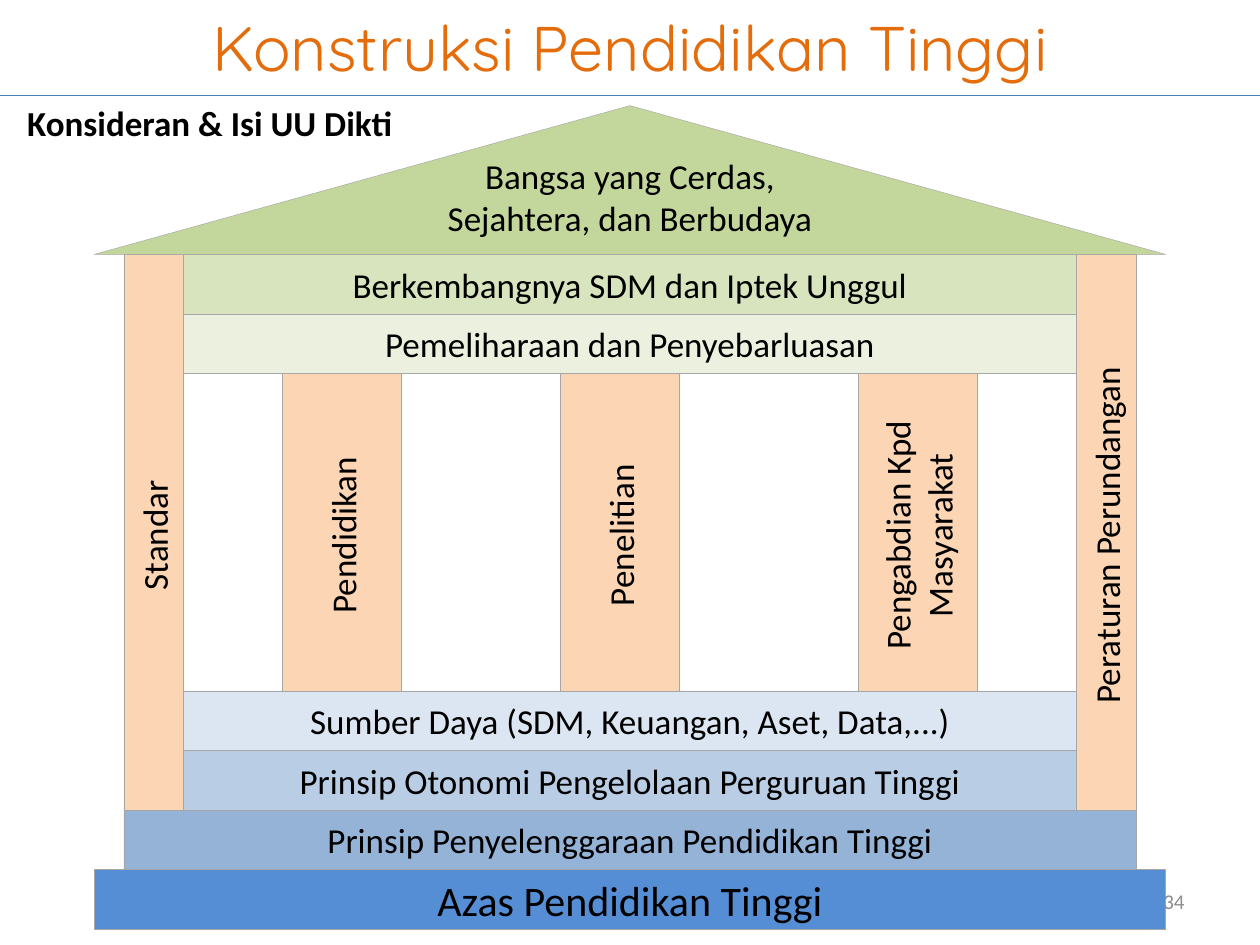
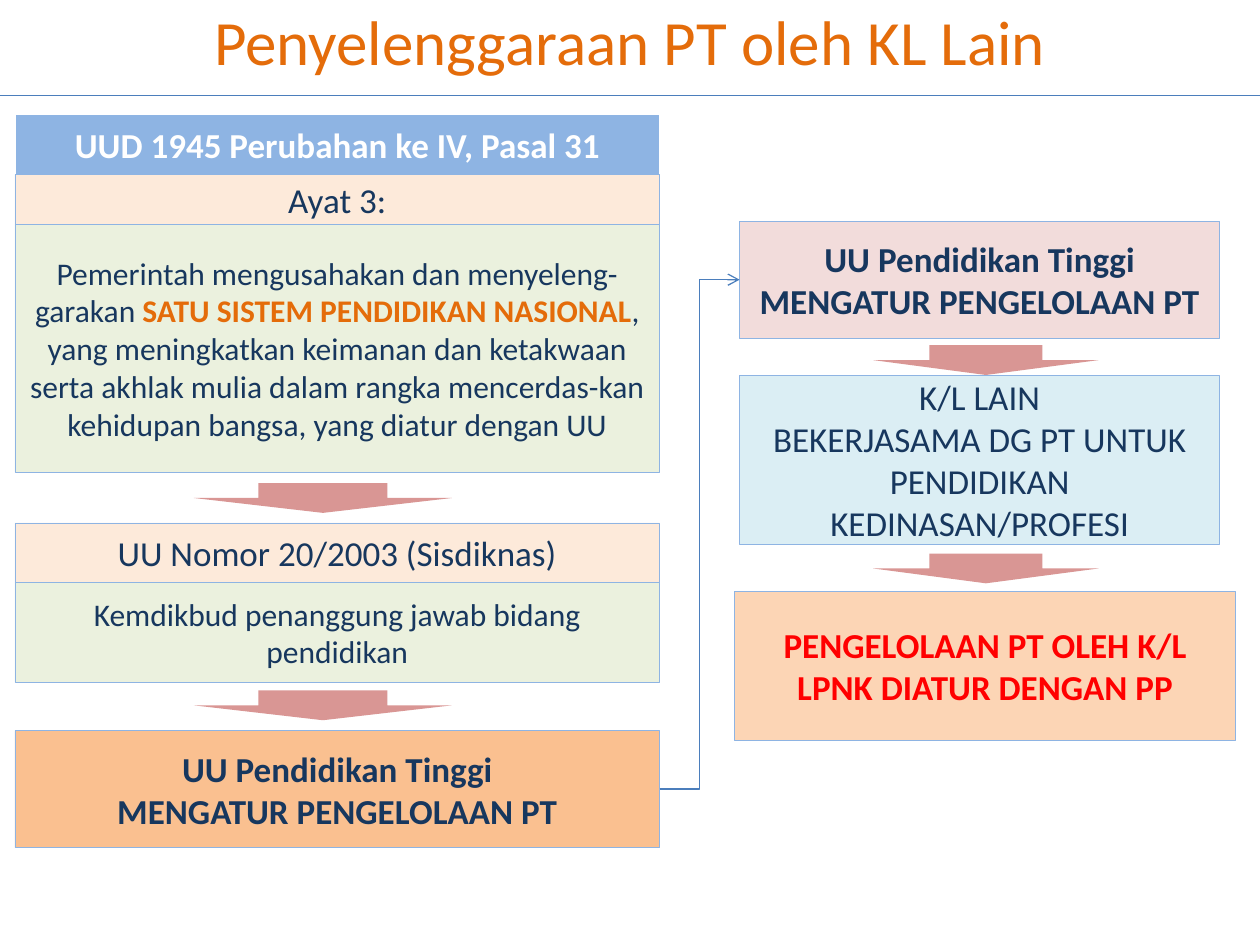
from dataclasses import dataclass
from typing import Any

from lxml.etree import SubElement
from pptx import Presentation
from pptx.dml.color import RGBColor
from pptx.enum.shapes import MSO_CONNECTOR, MSO_SHAPE
from pptx.enum.text import MSO_ANCHOR, MSO_AUTO_SIZE, PP_ALIGN
from pptx.oxml.ns import qn
from pptx.util import Cm, Pt

COLORS = {
    "title": "E46C0A", "black": "000000", "white": "FFFFFF", "red": "FF0000",
    "navy": "17375E", "page": "8C8C8C", "rule": "4B7EBC",
    "stone_edge": "A6A6A6", "box_edge": "8EB4E3",
    "roof": "C3D69B", "leaf": "D7E4BD", "pale_leaf": "EBF1DE",
    "pillar": "FCD5B5", "cream": "FDEADA", "orange": "FAC090",
    "pale_blue": "DCE6F2", "light_blue": "B9CDE5", "mid_blue": "95B3D7",
    "base": "558ED5", "aqua": "DBEEF4", "pink": "F2DCDB", "arrow": "D99694",
}
BODY_FONT = "Calibri"
SLIDE_W, SLIDE_H = 25.4, 19.05
RULE_Y = 1.93


@dataclass(frozen=True)
class Run:
    text: str
    color: str
    bold: bool = False


@dataclass(frozen=True)
class TextStyle:
    color: str = "black"
    size: int = 20
    bold: bool = False
    font: str = BODY_FONT
    align: PP_ALIGN = PP_ALIGN.CENTER
    anchor: MSO_ANCHOR = MSO_ANCHOR.MIDDLE
    wrap: bool = True


@dataclass(frozen=True)
class Block:
    x: float
    y: float
    w: float
    h: float
    fill: str
    paragraphs: tuple = ()
    style: TextStyle = TextStyle()
    edge: str | None = "stone_edge"
    geometry: MSO_SHAPE = MSO_SHAPE.RECTANGLE
    upright: bool = False
    bottom_inset: float = 0.13


STONE = TextStyle()
NAVY = TextStyle("navy")
NAVY_SMALL = TextStyle("navy", 18)
NAVY_BOLD = TextStyle("navy", bold=True)


def rgb(name: str) -> RGBColor:
    return RGBColor.from_string(COLORS[name])


def set_all(target: Any, values: dict[str, Any]) -> None:
    for attribute, value in values.items():
        setattr(target, attribute, value)


def write(frame: Any, paragraphs: tuple, style: TextStyle) -> None:
    set_all(frame, {"word_wrap": style.wrap, "vertical_anchor": style.anchor})
    for index, content in enumerate(paragraphs):
        paragraph = frame.add_paragraph() if index else frame.paragraphs[0]
        paragraph.alignment = style.align
        pieces = (content,) if isinstance(content, str) else content
        for piece in pieces:
            if isinstance(piece, str):
                piece = Run(piece, style.color, style.bold)
            run = paragraph.add_run()
            run.text = piece.text
            set_all(run.font, {"name": style.font, "size": Pt(style.size), "bold": piece.bold})
            run.font.color.rgb = rgb(piece.color)


def draw_block(slide: Any, block: Block) -> Any:
    shape = slide.shapes.add_shape(
        block.geometry, Cm(block.x), Cm(block.y), Cm(block.w), Cm(block.h))
    shape.shadow.inherit = False
    shape.fill.solid()
    shape.fill.fore_color.rgb = rgb(block.fill)
    if block.edge:
        shape.line.color.rgb = rgb(block.edge)
        shape.line.width = Pt(0.25)
    else:
        shape.line.fill.background()
    if block.paragraphs:
        write(shape.text_frame, block.paragraphs, block.style)
        shape.text_frame.margin_bottom = Cm(block.bottom_inset)
    if block.upright:
        shape.element.txBody.bodyPr.set("vert", "vert270")
    return shape


def draw_label(slide: Any, x: float, y: float, w: float, h: float,
               text: str, style: TextStyle) -> Any:
    label = slide.shapes.add_textbox(Cm(x), Cm(y), Cm(w), Cm(h))
    write(label.text_frame, (text,), style)
    return label


def draw_connector(slide: Any, kind: MSO_CONNECTOR, x1: float, y1: float,
                   x2: float, y2: float) -> Any:
    connector = slide.shapes.add_connector(kind, Cm(x1), Cm(y1), Cm(x2), Cm(y2))
    connector.line.color.rgb = rgb("rule")
    connector.line.width = Pt(0.75)
    SubElement(connector.element.spPr, qn("a:effectLst"))
    return connector


def start_slide(deck: Any, title: str, title_h: float, title_font: str = BODY_FONT) -> Any:
    slide = deck.slides.add_slide(deck.slide_layouts[6])
    draw_label(slide, 0, -0.08, SLIDE_W, title_h, title,
               TextStyle("title", 36, font=title_font))
    draw_connector(slide, MSO_CONNECTOR.STRAIGHT, 0, RULE_Y, SLIDE_W, RULE_Y)
    return slide


def build_house(deck: Any) -> None:
    slide = start_slide(deck, "Konstruksi Pendidikan Tinggi", 2.01, "Quicksand")
    course = 1.2
    eaves_x, eaves_w = 1.9, 21.6
    wall_x, wall_w = 2.5, 20.4
    inner_x, inner_w = wall_x + course, wall_w - 2 * course
    roof_y, roof_h = 2.13, 3.0
    wall_y = roof_y + roof_h
    pillar_y, pillar_w, pillar_h = wall_y + 2 * course, 2.4, 6.4
    floor_y = pillar_y + pillar_h
    wall_h = floor_y + 2 * course - wall_y

    courses = (
        (inner_x, wall_y, inner_w, "leaf", "Berkembangnya SDM dan Iptek Unggul", 20),
        (inner_x, wall_y + course, inner_w, "pale_leaf", "Pemeliharaan dan Penyebarluasan", 20),
        (inner_x, floor_y, inner_w, "pale_blue", "Sumber Daya (SDM, Keuangan, Aset, Data,...)", 20),
        (inner_x, floor_y + course, inner_w, "light_blue",
         "Prinsip Otonomi Pengelolaan Perguruan Tinggi", 20),
        (wall_x, floor_y + 2 * course, wall_w, "mid_blue",
         "Prinsip Penyelenggaraan Pendidikan Tinggi", 20),
        (eaves_x, floor_y + 3 * course, eaves_w, "base", "Azas Pendidikan Tinggi", 24),
    )
    for x, y, w, fill, text, size in courses:
        draw_block(slide, Block(x, y, w, course, fill, (text,), TextStyle(size=size)))

    uprights = (
        (5.7, pillar_y, pillar_w, pillar_h, "Pendidikan"),
        (11.3, pillar_y, pillar_w, pillar_h, "Penelitian"),
        (17.3, pillar_y, pillar_w, pillar_h, "Pengabdian Kpd Masyarakat"),
        (wall_x, wall_y, course, wall_h, "Standar"),
        (inner_x + inner_w, wall_y, course, wall_h, "Peraturan Perundangan"),
    )
    for x, y, w, h, text in uprights:
        draw_block(slide, Block(x, y, w, h, "pillar", (text,), upright=True))

    draw_block(slide, Block(
        eaves_x, roof_y, eaves_w, roof_h, "roof",
        ("Bangsa yang Cerdas,", "Sejahtera, dan Berbudaya"), STONE,
        geometry=MSO_SHAPE.ISOSCELES_TRIANGLE, bottom_inset=0.97))
    draw_label(slide, 18.2, 17.66, 5.93, 1.01, "34",
               TextStyle("page", 12, align=PP_ALIGN.RIGHT))
    heading = draw_label(slide, 0.3, RULE_Y, 7.98, 1.11, "Konsideran & Isi UU Dikti",
                         TextStyle(bold=True, align=PP_ALIGN.LEFT,
                                   anchor=MSO_ANCHOR.TOP, wrap=False))
    heading.text_frame.auto_size = MSO_AUTO_SIZE.SHAPE_TO_FIT_TEXT


def build_legal_flow(deck: Any) -> None:
    slide = start_slide(deck, "Penyelenggaraan PT oleh KL Lain", 1.8)
    left_x, left_w = 0.3, 13.0
    right_x, right_w = 14.91, 9.68
    law_h = 2.36
    law = ("UU Pendidikan Tinggi", "MENGATUR PENGELOLAAN PT")
    mandate = ((
        Run("Pemerintah mengusahakan dan menyeleng-garakan ", "navy"),
        Run("SATU SISTEM PENDIDIKAN NASIONAL", "title", True),
        Run(", yang meningkatkan keimanan dan ketakwaan serta akhlak mulia dalam rangka "
            "mencerdas-kan kehidupan bangsa, yang diatur dengan UU", "navy"),
    ),)
    boxes = (
        (left_x, 4.52, left_w, 5.0, "pale_leaf", mandate, NAVY_SMALL),
        (left_x, 3.52, left_w, 1.0, "cream", ("Ayat 3:",), NAVY),
        (left_x, 10.54, left_w, 1.2, "cream", ("UU Nomor 20/2003 (Sisdiknas)",), NAVY),
        (0.33, 2.32, 12.95, 1.2, "box_edge", ("UUD 1945 Perubahan ke IV, Pasal 31",),
         TextStyle("white", bold=True)),
        (left_x, 11.74, left_w, 2.02, "pale_leaf",
         ("Kemdikbud penanggung jawab bidang pendidikan",), NAVY_SMALL),
        (right_x, 7.57, right_w, 3.4, "aqua",
         ("K/L LAIN", "BEKERJASAMA DG PT UNTUK PENDIDIKAN KEDINASAN/PROFESI"), NAVY),
        (14.81, 11.92, 10.1, 3.0, "pillar",
         ("PENGELOLAAN PT OLEH K/L LPNK DIATUR DENGAN PP",), TextStyle("red", bold=True)),
    )
    for x, y, w, h, fill, text, style in boxes:
        draw_block(slide, Block(x, y, w, h, fill, text, style, "box_edge"))

    law_left, law_right = (
        draw_block(slide, Block(x, y, w, law_h, fill, law, NAVY_BOLD, "box_edge"))
        for x, y, w, fill in ((left_x, 14.73, left_w, "orange"),
                              (right_x, 4.46, right_w, "pink")))

    for x, w, tops in ((3.91, 5.2, (9.74, 13.92)), (17.6, 4.55, (6.96, 11.16))):
        for y in tops:
            draw_block(slide, Block(x, y, w, 0.6, "arrow", edge=None,
                                    geometry=MSO_SHAPE.DOWN_ARROW))

    link = draw_connector(slide, MSO_CONNECTOR.ELBOW, left_x + left_w, 14.73 + law_h / 2,
                          right_x, 4.46 + law_h / 2)
    link.begin_connect(law_left, 3)
    link.end_connect(law_right, 1)
    SubElement(link.line._get_or_add_ln(), qn("a:tailEnd"), type="arrow")


def main() -> None:
    deck = Presentation()
    set_all(deck, {"slide_width": Cm(SLIDE_W), "slide_height": Cm(SLIDE_H)})
    build_house(deck)
    build_legal_flow(deck)
    deck.save("out.pptx")


if __name__ == "__main__":
    main()
